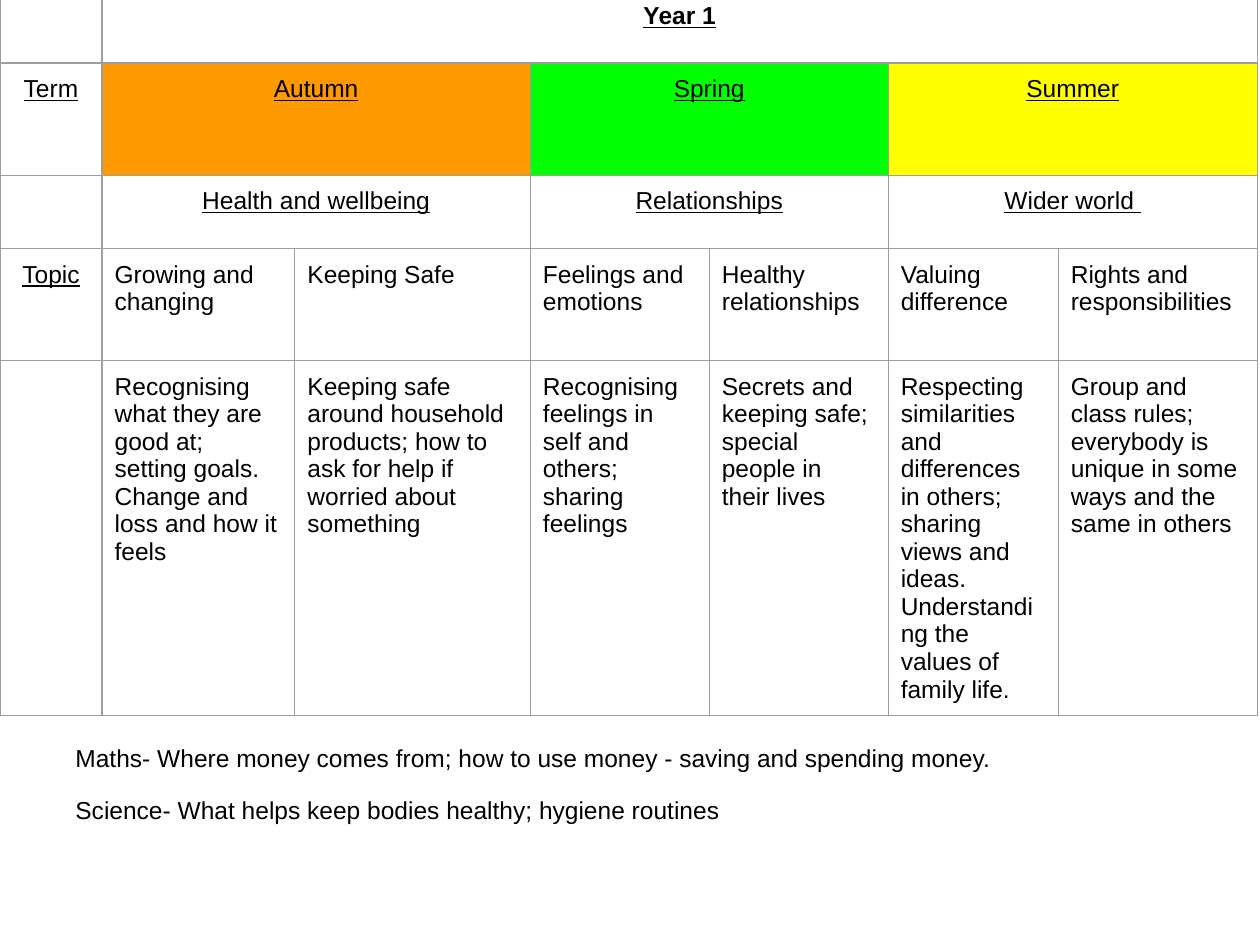
import pptx
import pptx.dml.color
import pptx.enum.text
import pptx.oxml
import pptx.oxml.ns
import pptx.util
from pptx.util import Inches

COLORS = {
    "text": "000000",
    "border": "9E9E9E",
    "autumn": "FF9900",
    "spring": "00FF00",
    "summer": "FFFF00",
}
FONT = {"name": "Arial", "size": pptx.util.Pt(14), "bold": False, "underline": False}
HEADING = {"underline": True}
TITLE = {"underline": True, "bold": True}
MARGINS = ("margin_left", "margin_top", "margin_right", "margin_bottom")
COLUMN_WIDTHS = (0.81, 1.53, 1.87, 1.42, 1.42, 1.35, 1.58)
ROW_HEIGHTS = (0.58, 0.89, 0.58, 0.89, 2.74)
TERMS = (
    ("Autumn", "autumn", "Health and wellbeing"),
    ("Spring", "spring", "Relationships"),
    ("Summer", "summer", "Wider world "),
)
TOPICS = (
    ("Growing and changing",
     "Recognising what they are good at; setting goals. Change and loss and how it feels"),
    ("Keeping Safe",
     "Keeping safe around household products; how to ask for help if worried about something"),
    ("Feelings and emotions",
     "Recognising feelings in self and others; sharing feelings"),
    ("Healthy relationships",
     "Secrets and keeping safe; special people in their lives"),
    ("Valuing difference",
     "Respecting similarities and differences in others; sharing views and ideas. "
     "Understanding the values of family life."),
    ("Rights and responsibilities",
     "Group and class rules; everybody is unique in some ways and the same in others"),
)
SUBJECT_NOTES = (
    "Maths- Where money comes from; how to use money - saving and spending money.",
    "Science- What helps keep bodies healthy; hygiene routines",
)


def set_values(target, values):
    """Set each named attribute on the target."""
    for name, value in values.items():
        setattr(target, name, value)


def rgb(name):
    """Return the named colour."""
    return pptx.dml.color.RGBColor.from_string(COLORS[name])


def format_font(font, values):
    """Apply the slide font with the given differences."""
    set_values(font, {**FONT, **values})
    font.color.rgb = rgb("text")


def add_borders(cell):
    """Draw a thin line on every side of a cell."""
    properties = cell._tc.get_or_add_tcPr()
    for side in ("lnL", "lnR", "lnT", "lnB"):
        properties.append(pptx.oxml.parse_xml(
            f'<a:{side} {pptx.oxml.ns.nsdecls("a")} w="{pptx.util.Pt(0.75)}">'
            f'<a:solidFill><a:srgbClr val="{COLORS["border"]}"/></a:solidFill></a:{side}>'))


def format_cell(cell):
    """Give a cell its borders, margins, font and clear fill."""
    add_borders(cell)
    set_values(cell, dict.fromkeys(MARGINS, Inches(0.1)))
    cell.fill.background()
    format_font(cell.text_frame.paragraphs[0].font, {})


def write_cell(cell, text, values=None):
    """Write a cell, centring it when it is a heading."""
    paragraph = cell.text_frame.paragraphs[0]
    run = paragraph.add_run()
    run.text = text
    format_font(run.font, values or {})
    if values:
        paragraph.alignment = pptx.enum.text.PP_ALIGN.CENTER


def add_curriculum_table(slide, left, top, width, height):
    """Place the year's table of terms and topics."""
    table = slide.shapes.add_table(
        len(ROW_HEIGHTS), len(COLUMN_WIDTHS), left, top, width, height).table
    set_values(table, {"first_row": False, "horz_banding": False})
    for column, column_width in zip(table.columns, COLUMN_WIDTHS):
        column.width = Inches(column_width)
    for row, row_height in zip(table.rows, ROW_HEIGHTS):
        row.height = Inches(row_height)
    for cell in table.iter_cells():
        format_cell(cell)

    table.cell(0, 1).merge(table.cell(0, 6))
    write_cell(table.cell(0, 1), "Year 1", TITLE)
    for row_index, label in ((1, "Term"), (3, "Topic")):
        write_cell(table.cell(row_index, 0), label, HEADING)
    for index, (term, color, theme) in enumerate(TERMS):
        first = 1 + 2 * index
        for row_index, text in ((1, term), (2, theme)):
            table.cell(row_index, first).merge(table.cell(row_index, first + 1))
            write_cell(table.cell(row_index, first), text, HEADING)
        fill = table.cell(1, first).fill
        fill.solid()
        fill.fore_color.rgb = rgb(color)
    for column_index, (topic, details) in enumerate(TOPICS, 1):
        write_cell(table.cell(3, column_index), topic)
        write_cell(table.cell(4, column_index), details)


def add_subject_notes(slide, left, top, width, height):
    """Place the links to other subjects below the table."""
    frame = slide.shapes.add_textbox(left, top, width, height).text_frame
    set_values(frame, {"word_wrap": True, **dict.fromkeys(MARGINS, Inches(0.1))})
    for index, text in enumerate(SUBJECT_NOTES):
        paragraph = frame.add_paragraph() if index else frame.paragraphs[0]
        set_values(paragraph, {"line_spacing": 1.29,
                               "space_before": pptx.util.Pt(8 if index else 0)})
        run = paragraph.add_run()
        run.text = text
        format_font(run.font, {})


def main():
    """Build and save the presentation."""
    presentation = pptx.Presentation()
    set_values(presentation, {"slide_width": Inches(10), "slide_height": Inches(7.5)})
    slide = presentation.slides.add_slide(presentation.slide_layouts[6])
    add_curriculum_table(slide, Inches(0), Inches(-0.08),
                         Inches(sum(COLUMN_WIDTHS)), Inches(sum(ROW_HEIGHTS)))
    add_subject_notes(slide, Inches(0.5), Inches(5.73), Inches(8.55), Inches(0.82))
    presentation.save("out.pptx")


if __name__ == "__main__":
    main()
